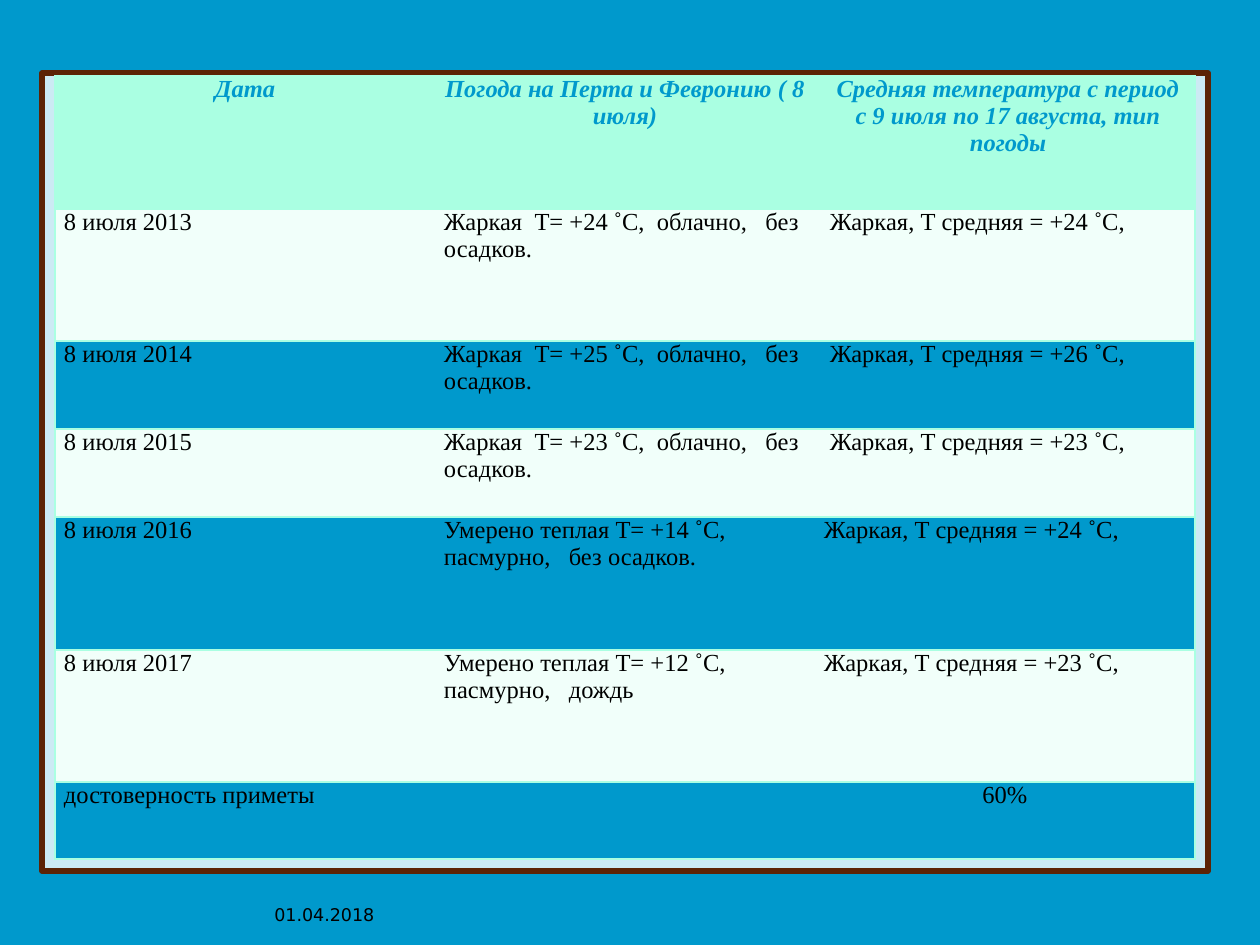
from dataclasses import dataclass

from lxml import etree
from pptx import Presentation
from pptx.dml.color import RGBColor
from pptx.enum.shapes import MSO_SHAPE
from pptx.enum.text import MSO_ANCHOR, PP_ALIGN
from pptx.oxml.ns import qn
from pptx.slide import Slide
from pptx.table import _Cell
from pptx.util import Emu, Inches, Pt

RECTANGLE = MSO_SHAPE.RECTANGLE
MIDDLE = MSO_ANCHOR.MIDDLE
LEFT, CENTER = PP_ALIGN.LEFT, PP_ALIGN.CENTER

PX_PER_INCH = 126
COLORS = {
    "blue": "0099CC",
    "mint": "AAFFE2",
    "pale": "F1FFFA",
    "white": "FFFFFF",
    "brown": "5C2305",
    "black": "000000",
}
TABLE_FONT = "Times New Roman"
CELL_MARGIN = 9
COLUMN_WIDTH = 380
COLUMN_COUNT = 3


@dataclass
class WeatherRow:
    height: int
    date: str
    weather: str
    average: str
    average_indent: int = 0
    average_align: PP_ALIGN = LEFT


HEADER = WeatherRow(133, "Дата", "Погода на Перта и Февронию ( 8 июля)",
                    "Средняя температура с период с 9 июля по 17 августа, тип погоды",
                    average_indent=6)
HOT = "Жаркая  Т= +{} ˚С,  облачно,   без осадков."
MILD = "Умерено теплая Т= +{} ˚С,  пасмурно,   {}"
AVERAGE = "Жаркая, Т средняя = +{} ˚С,"
BODY = [
    WeatherRow(132, "8 июля 2013", HOT.format(24), AVERAGE.format(24), 6),
    WeatherRow(88, "8 июля 2014", HOT.format(25), AVERAGE.format(26), 6),
    WeatherRow(88, "8 июля 2015", HOT.format(23), AVERAGE.format(23), 6),
    WeatherRow(133, "8 июля 2016", MILD.format(14, "без осадков."), AVERAGE.format(24)),
    WeatherRow(132, "8 июля 2017", MILD.format(12, "дождь"), AVERAGE.format(23)),
    WeatherRow(77, "достоверность приметы", "", "60%", average_align=CENTER),
]


def px(length: int) -> Emu:
    return Emu(round(length * Inches(1) / PX_PER_INCH))


def color(name: str) -> RGBColor:
    return RGBColor.from_string(COLORS[name])


def set_borders(cell: _Cell, sides: str) -> None:
    """Draw mint lines on the given sides (from "LRTB") and clear the others."""
    properties = cell._tc.get_or_add_tcPr()
    for side in "LRTB":
        line = etree.SubElement(properties, qn(f"a:ln{side}"), w=str(Pt(1)))
        if side in sides:
            fill = etree.SubElement(line, qn("a:solidFill"))
            etree.SubElement(fill, qn("a:srgbClr"), val=COLORS["mint"])
        else:
            etree.SubElement(line, qn("a:noFill"))


def fill_cell(cell: _Cell, text: str, fill: str, align: PP_ALIGN,
              indent: int, is_header: bool) -> None:
    cell.fill.solid()
    cell.fill.fore_color.rgb = color(fill)
    cell.margin_left = px(CELL_MARGIN + indent)
    cell.margin_right = px(CELL_MARGIN)
    cell.margin_top = cell.margin_bottom = 0
    cell.text = text
    paragraph = cell.text_frame.paragraphs[0]
    paragraph.alignment = align
    paragraph.font.name = TABLE_FONT
    paragraph.font.size = Pt(14)
    paragraph.font.bold = paragraph.font.italic = is_header
    paragraph.font.color.rgb = color("blue" if is_header else "black")


def add_frame(slide: Slide) -> None:
    frame = slide.shapes.add_shape(RECTANGLE, px(42), px(73), px(1166), px(798))
    frame.shadow.inherit = False
    frame.fill.solid()
    frame.fill.fore_color.rgb = color("white")
    white = frame._element.spPr.find(qn("a:solidFill"))[0]
    etree.SubElement(white, qn("a:alpha"), val="80000")
    frame.line.color.rgb = color("brown")
    frame.line.width = Pt(3)


def add_weather_table(slide: Slide) -> None:
    rows = [HEADER, *BODY]
    table = slide.shapes.add_table(
        len(rows), COLUMN_COUNT, px(55), px(76), px(COLUMN_WIDTH * COLUMN_COUNT),
        px(sum(row.height for row in rows))).table
    table.first_row = table.horz_banding = False
    for column in table.columns:
        column.width = px(COLUMN_WIDTH)
    for index, row in enumerate(rows):
        is_header = index == 0
        fill = "mint" if is_header else ("blue", "pale")[index % 2]
        table.rows[index].height = px(row.height)
        texts = (row.date, row.weather, row.average)
        for column, (text, sides) in enumerate(zip(texts, ("LTB", "TB", "RTB"))):
            is_last = column == COLUMN_COUNT - 1
            align = CENTER if is_header else row.average_align if is_last else LEFT
            cell = table.cell(index, column)
            set_borders(cell, sides)
            fill_cell(cell, text, fill, align,
                      row.average_indent if is_last else 0, is_header)


def add_date(slide: Slide) -> None:
    box = slide.shapes.add_textbox(px(262), px(885), px(219), px(60))
    frame = box.text_frame
    frame.word_wrap = True
    frame.vertical_anchor = MIDDLE
    frame.text = "01.04.2018"
    font = frame.paragraphs[0].font
    font.name = "DejaVu Sans"
    font.size = Pt(10)
    font.color.rgb = color("black")


def main() -> None:
    presentation = Presentation()
    presentation.slide_width = px(1260)
    presentation.slide_height = px(945)
    slide = presentation.slides.add_slide(presentation.slide_layouts[6])
    slide.background.fill.solid()
    slide.background.fill.fore_color.rgb = color("blue")
    add_frame(slide)
    add_date(slide)
    add_weather_table(slide)
    presentation.save("out.pptx")


if __name__ == "__main__":
    main()
